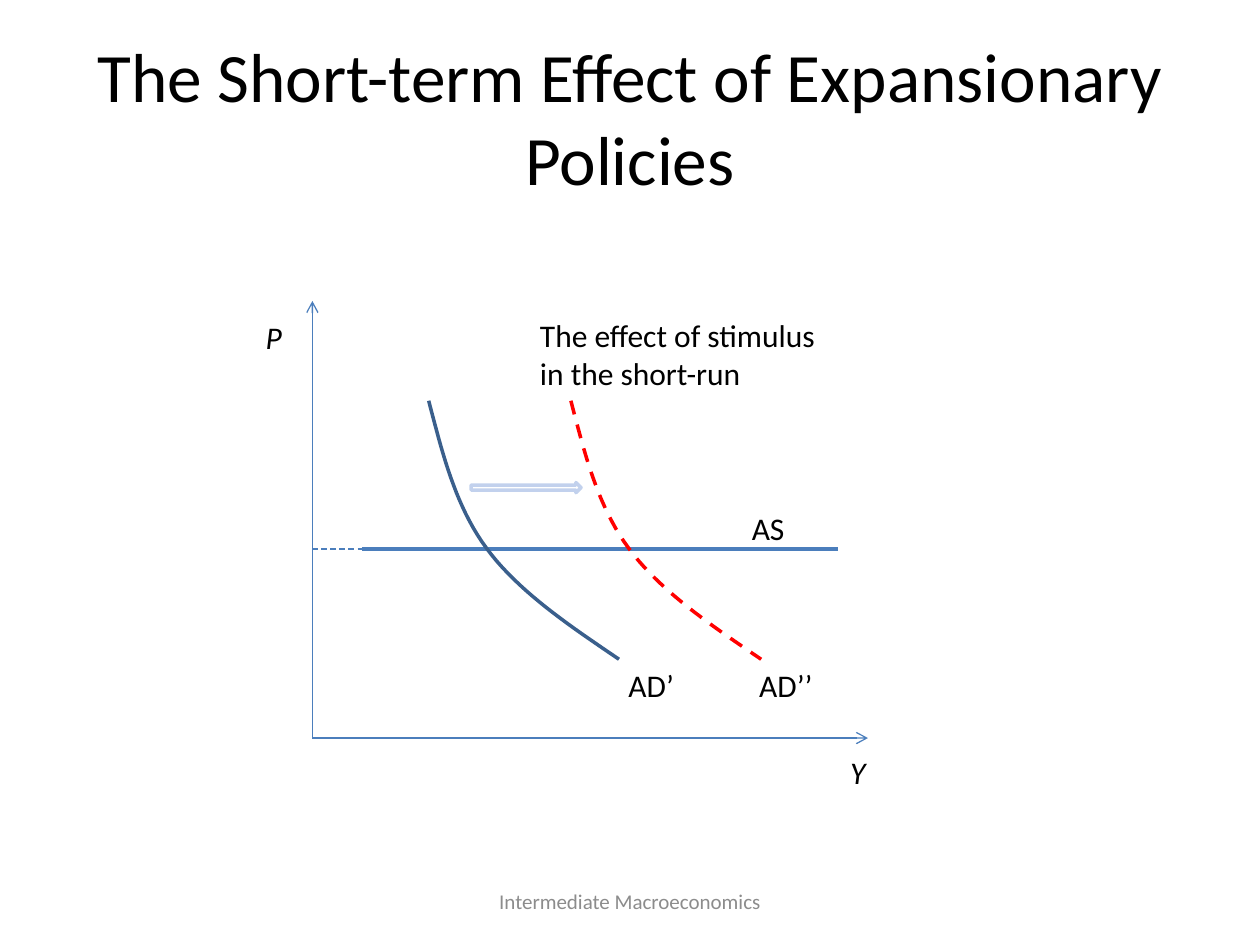
"""Build a slide on the short-term effect of expansionary policies."""
from lxml import etree
from pptx import Presentation
from pptx.dml.color import RGBColor
from pptx.enum.dml import MSO_LINE
from pptx.enum.shapes import MSO_CONNECTOR, MSO_SHAPE
from pptx.enum.text import MSO_ANCHOR, MSO_AUTO_SIZE, PP_ALIGN
from pptx.oxml.ns import qn
from pptx.util import Pt

STRAIGHT = MSO_CONNECTOR.STRAIGHT
RIGHT_ARROW = MSO_SHAPE.RIGHT_ARROW
DASH = MSO_LINE.DASH
MIDDLE, TOP = MSO_ANCHOR.MIDDLE, MSO_ANCHOR.TOP
CENTER, LEFT = PP_ALIGN.CENTER, PP_ALIGN.LEFT
GROW, FIXED = MSO_AUTO_SIZE.SHAPE_TO_FIT_TEXT, MSO_AUTO_SIZE.NONE

THEME = {
    "font": "Calibri",
    "title_size": 39.6, "label_size": 18, "footer_size": 12,
    "text": RGBColor(0x00, 0x00, 0x00),
    "footer": RGBColor(0x8C, 0x8C, 0x8C),
    "axis": RGBColor(0x4B, 0x7E, 0xBC),
    "demand": RGBColor(0x3A, 0x5F, 0x8C),
    "new_demand": RGBColor(0xFF, 0x00, 0x00),
    "shift": RGBColor(0xC2, 0xD1, 0xED),
    "thin": 0.75, "thick": 2,
}


def write_text(box, text, size, color, italic=None, align=LEFT, anchor=TOP, fit=GROW):
    frame = box.text_frame
    frame_format = {"word_wrap": True, "auto_size": fit, "vertical_anchor": anchor}
    for name, value in frame_format.items():
        setattr(frame, name, value)
    para = frame.paragraphs[0]
    para.alignment = align
    span = para.add_run()
    span.text = text
    font_format = {"name": THEME["font"], "size": Pt(size), "italic": italic}
    for name, value in font_format.items():
        setattr(span.font, name, value)
    span.font.color.rgb = color


def style_line(line, color, width, dash=None):
    line.color.rgb = color
    for name, value in {"width": Pt(width), "dash_style": dash}.items():
        setattr(line, name, value)


deck = Presentation()
deck.slide_width, deck.slide_height = Pt(720), Pt(540)
page = deck.slides.add_slide(deck.slide_layouts[5])
shapes = page.shapes

title = shapes.title
title_place = {"left": 36, "top": 21.6, "width": 648, "height": 90}
for name, value in title_place.items():
    setattr(title, name, Pt(value))
write_text(title, "The Short-term Effect of Expansionary Policies", THEME["title_size"],
           THEME["text"], align=CENTER, anchor=MIDDLE, fit=FIXED)

footer = shapes.add_textbox(Pt(246), Pt(500.5), Pt(228), Pt(28.75))
write_text(footer, "Intermediate Macroeconomics", THEME["footer_size"],
           THEME["footer"], align=CENTER, anchor=MIDDLE, fit=FIXED)

origin_x, origin_y = 178.5, 421.75
supply_x, supply_y = 206.75, 313.75
thin, thick = THEME["thin"], THEME["thick"]
lines = [
    (origin_x, origin_y, 496, origin_y, thin, None, True),
    (origin_x, origin_y, origin_x, 172, thin, None, True),
    (supply_x, supply_y, 479, supply_y, thick, None, False),
    (origin_x, supply_y, supply_x, supply_y, thin, DASH, False),
]
for x1, y1, x2, y2, width, dash, has_arrow in lines:
    connector = shapes.add_connector(STRAIGHT, Pt(x1), Pt(y1), Pt(x2), Pt(y2))
    style_line(connector.line, THEME["axis"], width, dash)
    properties = connector._element.spPr
    if has_arrow:
        etree.SubElement(properties.find(qn("a:ln")), qn("a:tailEnd"), type="arrow")
    etree.SubElement(properties, qn("a:effectLst"))

demand_segments = [
    ((0, 0), (7.75, 29.5), (15, 59.75), (33, 84.25)),
    ((33, 84.25), (51, 108.75), (80, 128.25), (108.75, 147.75)),
]
steps = 20
curve_points = []
for segment in demand_segments:
    for step in range(1, steps + 1):
        t = step / steps
        weights = ((1 - t) ** 3, 3 * t * (1 - t) ** 2, 3 * t ** 2 * (1 - t), t ** 3)
        curve_points.append([sum(weight * point[axis] for weight, point in zip(weights, segment))
                             for axis in (0, 1)])

curve_top = 229
for curve_left, color, dash in [(245, THEME["demand"], None), (326.25, THEME["new_demand"], DASH)]:
    builder = shapes.build_freeform(Pt(curve_left), Pt(curve_top))
    builder.add_line_segments([(Pt(curve_left + x), Pt(curve_top + y)) for x, y in curve_points],
                              close=False)
    curve = builder.convert_to_shape()
    curve.shadow.inherit = False
    curve.fill.background()
    style_line(curve.line, color, thick, dash)

shift_arrow = shapes.add_shape(RIGHT_ARROW, Pt(269.25), Pt(275.75), Pt(62.75), Pt(5.75))
shift_arrow.shadow.inherit = False
shift_arrow.fill.background()
style_line(shift_arrow.line, THEME["shift"], thick)

labels = [
    ("P", 144.75, 178, 33.75, 29, True),
    ("Y", 478.75, 427, 33.75, 29, True),
    ("The effect of stimulus in the short-run", 301.5, 177, 187.25, 51, None),
    ("AS", 422.5, 287.25, 57, 29, None),
    ("AD’", 352, 376.75, 53.25, 29, None),
    ("AD’’", 426.75, 376.75, 53.25, 29, None),
]
for text, left, top, width, height, italic in labels:
    box = shapes.add_textbox(Pt(left), Pt(top), Pt(width), Pt(height))
    write_text(box, text, THEME["label_size"], THEME["text"], italic)

deck.save("out.pptx")
